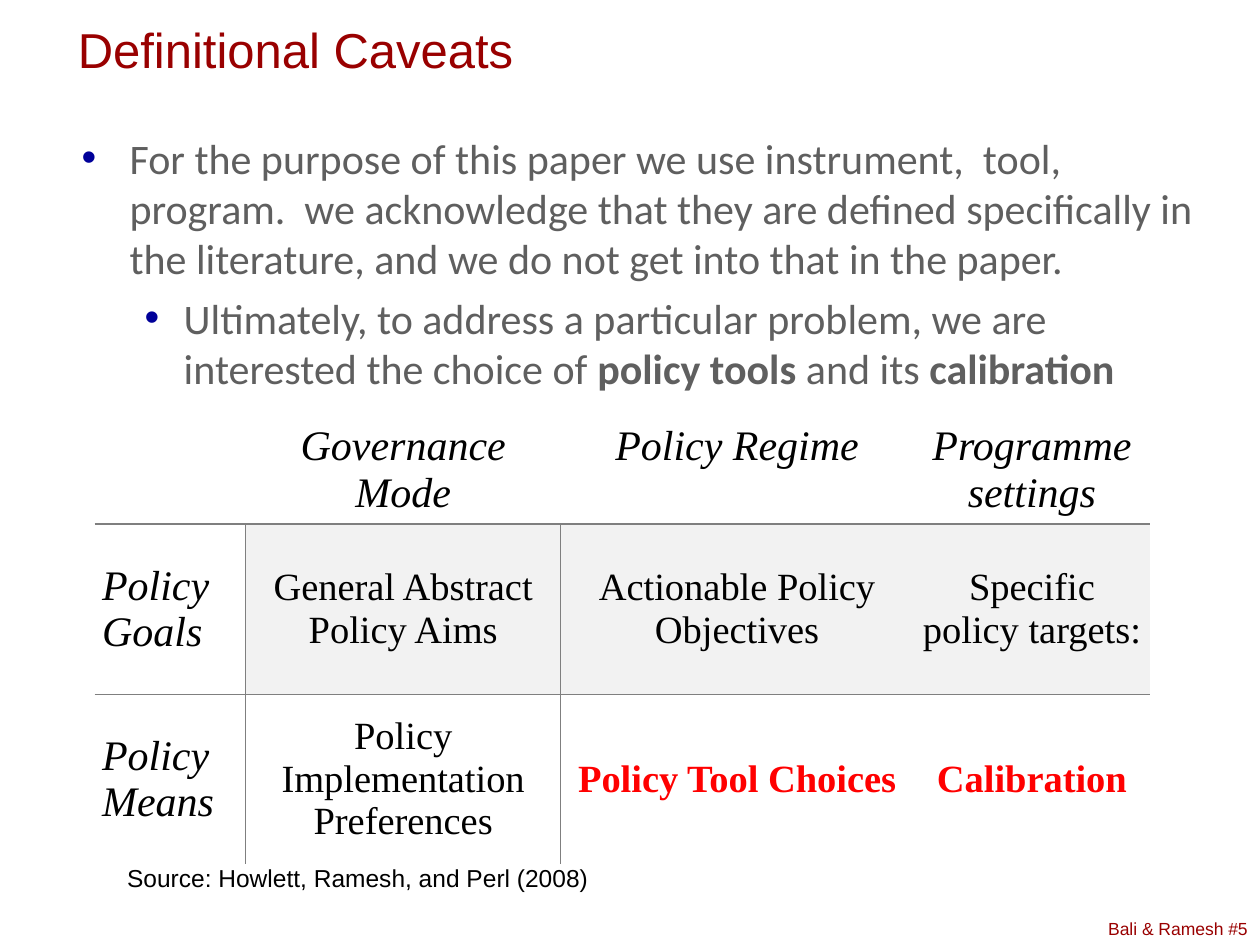
from dataclasses import dataclass

from lxml import etree
from pptx import Presentation
from pptx.dml.color import RGBColor
from pptx.enum.text import MSO_ANCHOR, PP_ALIGN
from pptx.oxml.ns import qn
from pptx.util import Inches, Pt

LEFT, MID, RIGHT = PP_ALIGN.LEFT, PP_ALIGN.CENTER, PP_ALIGN.RIGHT
TOP, CENTER, BOTTOM = MSO_ANCHOR.TOP, MSO_ANCHOR.MIDDLE, MSO_ANCHOR.BOTTOM
PLAIN_GRID = "{2D5ABB26-0587-4C30-8999-92F81FD0307C}"


@dataclass(frozen=True)
class Theme:
    sans: str = "Arial"
    body: str = "Calibri"
    serif: str = "Times New Roman"
    title: str = "990000"
    gray: str = "5F5F5F"
    dot: str = "000099"
    ink: str = "000000"
    hot: str = "FF0000"
    rule: str = "7F7F7F"
    white: str = "FFFFFF"
    shade: str = "F2F2F2"
    big: int = 28
    main: int = 24
    cell: int = 22
    note: int = 14
    small: int = 10


class Deck:
    def __init__(self, theme):
        self.theme = theme
        self.prs = Presentation()
        self.prs.slide_width = Inches(10)
        self.prs.slide_height = Inches(7.5)
        self.slide = self.prs.slides.add_slide(self.prs.slide_layouts[6])

    def run(self, para, text, face, size, color, bold=False, italic=False):
        run = para.add_run()
        run.text = text
        font = run.font
        font.name, font.size = face, Pt(size)
        font.bold, font.italic = bold, italic
        font.color.rgb = RGBColor.from_string(color)

    def box(self, x, y, w, h, anchor=TOP):
        shape = self.slide.shapes.add_textbox(
            Inches(x), Inches(y), Inches(w), Inches(h))
        frame = shape.text_frame
        frame.word_wrap = True
        frame.vertical_anchor = anchor
        return frame

    def label(self, text, place, size, color, align=LEFT, anchor=TOP):
        para = self.box(*place, anchor).paragraphs[0]
        para.alignment = align
        self.run(para, text, self.theme.sans, size, color)

    def bullet(self, para, runs, margin, hang):
        props = para._p.get_or_add_pPr()
        props.set("marL", str(Inches(margin)))
        props.set("indent", str(-Inches(hang)))
        color = etree.SubElement(props, qn("a:buClr"))
        etree.SubElement(color, qn("a:srgbClr"), val=self.theme.dot)
        etree.SubElement(props, qn("a:buFont"), typeface=self.theme.sans)
        etree.SubElement(props, qn("a:buChar"), char="•")
        for text, bold in runs:
            self.run(para, text, self.theme.body, self.theme.main,
                     self.theme.gray, bold)

    def edge(self, cell, sides):
        props = cell._tc.get_or_add_tcPr()
        for side in sides:
            line = etree.SubElement(props, qn("a:ln" + side), w=str(Pt(1)))
            fill = etree.SubElement(line, qn("a:solidFill"))
            etree.SubElement(fill, qn("a:srgbClr"), val=self.theme.rule)

    def grid(self, x, y, cols, rows, words):
        t = self.theme
        table = self.slide.shapes.add_table(
            len(rows), len(cols), Inches(x), Inches(y),
            Inches(sum(cols)), Inches(sum(rows))).table
        table.first_row = table.horz_banding = False
        table._tbl.tblPr.find(qn("a:tableStyleId")).text = PLAIN_GRID
        for col, width in zip(table.columns, cols):
            col.width = Inches(width)
        for row, height in zip(table.rows, rows):
            row.height = Inches(height)

        for r, line in enumerate(words):
            for c, text in enumerate(line):
                cell = table.cell(r, c)
                head = r == 0 or c == 0
                hot = r == 2 and c >= 2
                cell.margin_left = cell.margin_right = Inches(0.06)
                cell.margin_top = cell.margin_bottom = 0
                cell.vertical_anchor = CENTER if r else TOP
                # Rules under the heads and right of the row names
                sides = []
                if r and c < 2:
                    sides.append("L" if c else "R")
                if r < 2:
                    sides.append("T" if r else "B")
                self.edge(cell, sides)
                cell.fill.solid()
                cell.fill.fore_color.rgb = RGBColor.from_string(
                    t.shade if r == 1 and c else t.white)
                if text:
                    para = cell.text_frame.paragraphs[0]
                    para.alignment = MID if c else LEFT
                    self.run(para, text, t.serif, t.main if head else t.cell,
                             t.hot if hot else t.ink, hot, head)


def main():
    theme = Theme()
    deck = Deck(theme)

    # Title
    deck.label("Definitional Caveats", (0.52, 0.1, 9.17, 0.57),
               theme.big, theme.title, anchor=CENTER)

    # Bullets
    frame = deck.box(0.55, 1, 9.28, 2.3)
    deck.bullet(frame.paragraphs[0], [
        ("For the purpose of this paper we use instrument,  tool, program.  "
         "we acknowledge that they are defined specifically in the "
         "literature, and we do not get into that in the paper.", False),
    ], 0.38, 0.38)
    para = frame.add_paragraph()
    para.level = 1
    para.space_before = Pt(5)
    deck.bullet(para, [
        ("Ultimately, to address a particular problem, we are interested "
         "the choice of ", False),
        ("policy tools ", True),
        ("and its ", False),
        ("calibration", True),
    ], 0.81, 0.31)

    # Table of policy goals and means
    deck.grid(0.75, 3.36, [1.2, 2.5, 2.8, 1.88], [0.74, 1.35, 1.35], [
        ["", "Governance Mode", "Policy Regime", "Programme settings"],
        ["Policy Goals", "General Abstract Policy Aims",
         "Actionable Policy Objectives", "Specific policy targets:"],
        ["Policy Means", "Policy Implementation Preferences",
         "Policy Tool Choices", "Calibration"],
    ])

    # Source and footer
    deck.label("Source: Howlett, Ramesh, and Perl (2008)",
               (0.91, 6.8, 5.59, 0.34), theme.note, theme.ink)
    deck.label("Bali & Ramesh #5", (8.31, 7.33, 1.69, 0.17),
               theme.small, theme.title, RIGHT, BOTTOM)

    deck.prs.save("out.pptx")


if __name__ == "__main__":
    main()
